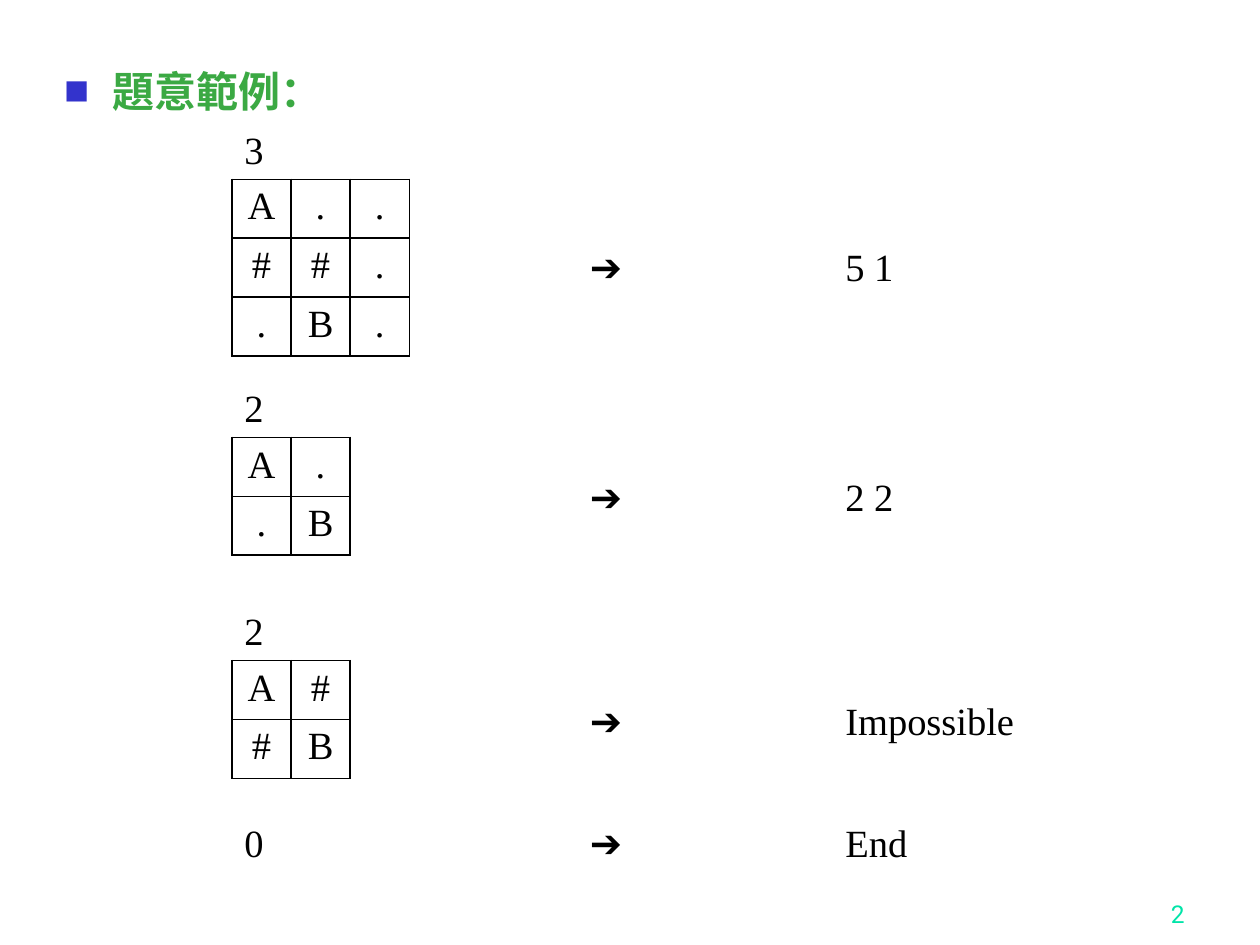
from lxml import etree
from pptx import Presentation
from pptx.dml.color import RGBColor
from pptx.enum import text
from pptx.oxml import ns
from pptx.util import Pt

SERIF, SYMBOL = "Times New Roman", "Noto Sans CJK JP"
BLACK, WHITE = "000000", "FFFFFF"
LINE_H, ROW_H, COL_W = 34, 31.5, 33.8
INPUT_X, ARROW_X, ANSWER_X = 132.5, 330, 476

# Caption top, maze size, maze rows, answer
CASES = [
    (68.5, "3", ["A..", "##.", ".B."], "5 1"),
    (216, "2", ["A.", ".B"], "2 2"),
    (343.5, "2", ["A#", "#B"], "Impossible"),
    (464.4, "0", [], "End"),
]


def color(value):
    return RGBColor.from_string(value)


def style(paragraph, size=22, font=SERIF, fill=BLACK, bold=False):
    paragraph.font.size = Pt(size)
    paragraph.font.name = font
    paragraph.font.bold = bold
    paragraph.font.color.rgb = color(fill)


def add_text(slide, box, words, wrap=False, **look):
    frame = slide.shapes.add_textbox(*map(Pt, box)).text_frame
    frame.word_wrap = wrap
    frame.text = words
    style(frame.paragraphs[0], **look)
    return frame


def add_child(parent, tag, **attributes):
    return etree.SubElement(parent, ns.qn(tag), attributes)


def add_heading(slide, box, words):
    frame = add_text(slide, box, words, wrap=True, size=24, fill="3BA943", bold=True)
    properties = frame.paragraphs[0]._p.get_or_add_pPr()
    properties.set("marL", str(Pt(27)))
    properties.set("indent", str(Pt(-27)))
    # Square bullet, placed ahead of the default run properties
    bullet = [
        etree.Element(ns.qn("a:buClr")),
        etree.Element(ns.qn("a:buSzPct"), val="60000"),
        etree.Element(ns.qn("a:buFont"), typeface=SYMBOL),
        etree.Element(ns.qn("a:buChar"), char="■"),
    ]
    add_child(bullet[0], "a:srgbClr", val="3333CC")
    for index, part in enumerate(bullet):
        properties.insert(index, part)
    frame.paragraphs[0].space_before = Pt(4.8)


def add_borders(cell):
    properties = cell._tc.get_or_add_tcPr()
    for index, side in enumerate("LRTB"):
        line = etree.Element(ns.qn(f"a:ln{side}"), w=str(Pt(1)))
        add_child(add_child(line, "a:solidFill"), "a:srgbClr", val=BLACK)
        properties.insert(index, line)


def add_maze(slide, left, top, rows):
    size = len(rows)
    maze = slide.shapes.add_table(
        size, size, Pt(left), Pt(top), Pt(size * COL_W), Pt(size * ROW_H)
    ).table
    maze.first_row = maze.horz_banding = False
    for column in maze.columns:
        column.width = Pt(COL_W)
    for r, row in enumerate(rows):
        maze.rows[r].height = Pt(ROW_H)
        for c, mark in enumerate(row):
            cell = maze.cell(r, c)
            cell.text = mark
            cell.fill.solid()
            cell.fill.fore_color.rgb = color(WHITE)
            style(cell.text_frame.paragraphs[0])
            cell.text_frame.paragraphs[0].alignment = text.PP_ALIGN.CENTER
            add_borders(cell)


def add_case(slide, top, size, rows, answer):
    add_text(slide, (INPUT_X, top, 26, LINE_H), size)
    answer_top = top
    if rows:
        add_maze(slide, INPUT_X, top + LINE_H, rows)
        # Arrow and answer sit level with the middle of the maze
        answer_top += LINE_H / 2 + len(rows) * ROW_H / 2 + 2.5
    add_text(slide, (ARROW_X, answer_top, 36.5, LINE_H), "➔", font=SYMBOL)
    add_text(slide, (ANSWER_X, answer_top, 112, LINE_H), answer)


def add_page_number(slide, box, number):
    frame = add_text(slide, box, number, wrap=True, size=14, font="Roboto", fill="00E4A8")
    frame.vertical_anchor = text.MSO_ANCHOR.BOTTOM
    frame.paragraphs[0].alignment = text.PP_ALIGN.RIGHT


def main():
    deck = Presentation()
    deck.slide_width, deck.slide_height = Pt(720), Pt(540)
    slide = deck.slides.add_slide(deck.slide_layouts[6])
    add_heading(slide, (30, 34, 636, 492), "題意範例：")
    for case in CASES:
        add_case(slide, *case)
    add_page_number(slide, (534, 498, 150, 36), "2")
    deck.save("out.pptx")


if __name__ == "__main__":
    main()
